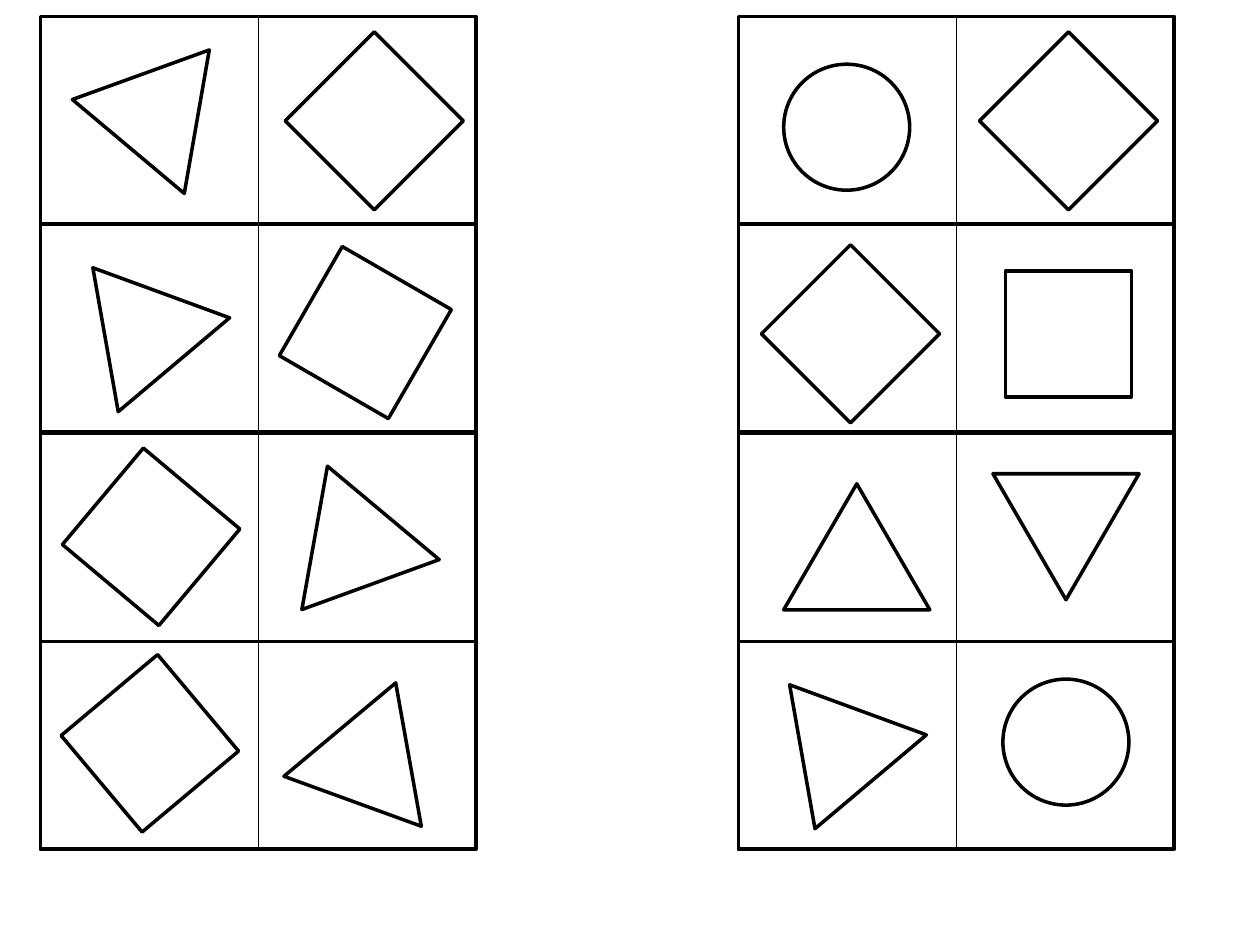
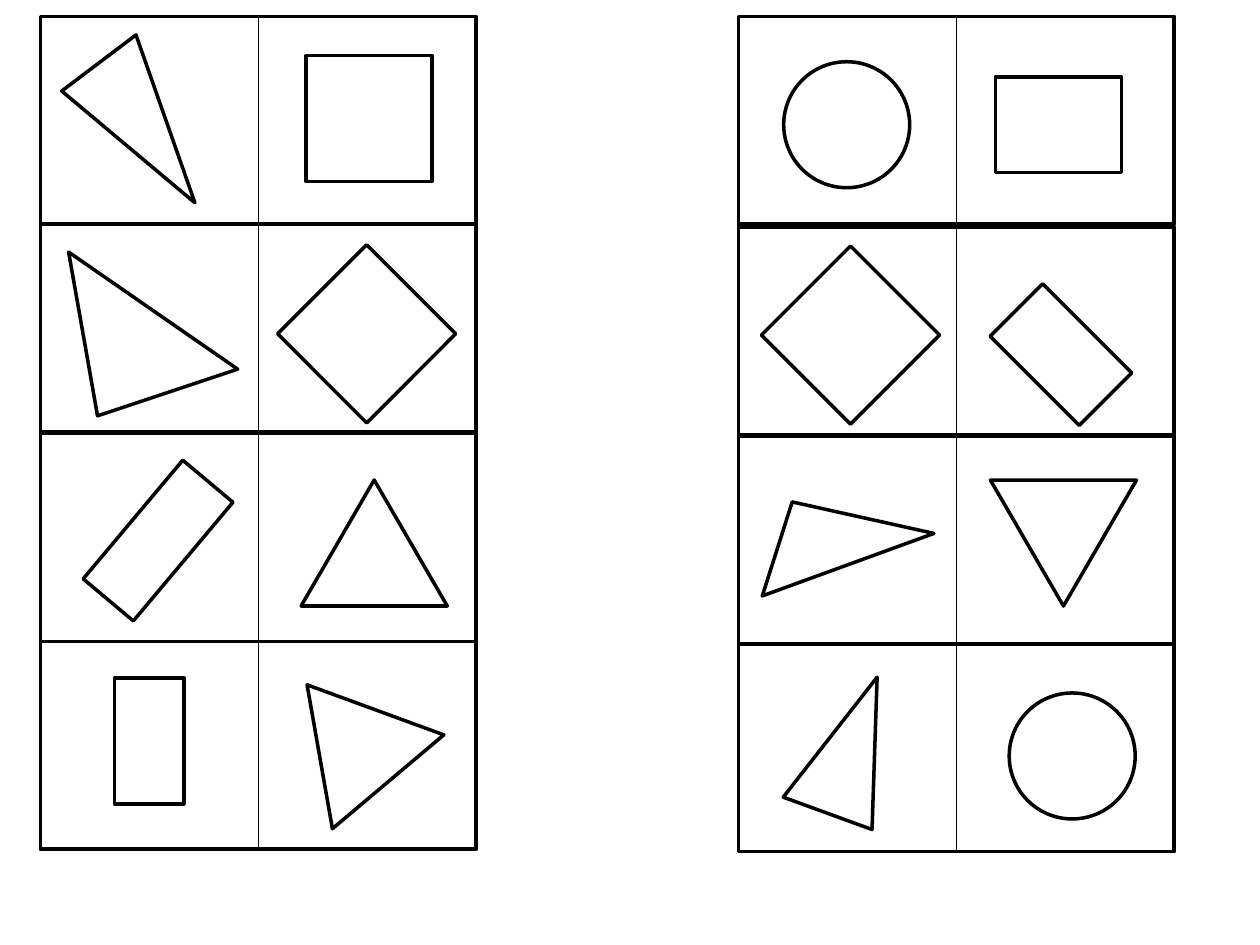
from pptx import Presentation
from pptx.dml.color import RGBColor
from pptx.enum.shapes import MSO_CONNECTOR, MSO_SHAPE
from pptx.oxml import parse_xml
from pptx.oxml.ns import nsdecls
from pptx.util import Inches, Pt

BLACK = RGBColor(0, 0, 0)
CARD_W, CARD_H = 3.46, 1.65
LEFT, RIGHT = 0.32, 5.86
EVEN = (0.13, 1.78, 3.44, 5.09)
LOW = (0.13, 1.8, 3.46, 5.11)

BOX = MSO_SHAPE.RECTANGLE
TRI = MSO_SHAPE.ISOSCELES_TRIANGLE
DISC = MSO_SHAPE.OVAL
SIZES = {BOX: (1, 1), TRI: (1.16, 1), DISC: (1, 1)}

# Each figure: kind, left, top, then any of turn, size and peak
SHEETS = [
    {
        "decks": [(LEFT, EVEN), (RIGHT, EVEN)],
        "figures": [
            (TRI, 0.76, 0.28, {"turn": 40}),
            (BOX, 2.47, 0.46, {"turn": 45}),
            (TRI, 0.75, 2.11, {"turn": 80}),
            (BOX, 2.4, 2.14, {"turn": 30}),
            (BOX, 0.7, 3.76, {"turn": 310}),
            (TRI, 2.19, 3.67, {"turn": 340}),
            (BOX, 0.69, 5.4, {"turn": 320}),
            (TRI, 2.39, 5.39, {"turn": 20}),
            (DISC, 6.22, 0.51, {}),
            (BOX, 7.98, 0.46, {"turn": 45}),
            (BOX, 6.25, 2.15, {"turn": 45}),
            (BOX, 7.98, 2.15, {}),
            (TRI, 6.22, 3.84, {}),
            (TRI, 7.88, 3.76, {"turn": 180}),
            (TRI, 6.28, 5.42, {"turn": 80}),
            (DISC, 7.96, 5.39, {}),
        ],
    },
    {
        "decks": [(LEFT, EVEN), (RIGHT, LOW)],
        "figures": [
            (TRI, 0.56, 0.53, {"turn": 40, "size": (1.38, 0.72), "peak": 0.12}),
            (BOX, 2.43, 0.44, {}),
            (TRI, 0.57, 1.97, {"turn": 80, "size": (1.32, 1.16), "peak": 0.87}),
            (BOX, 2.41, 2.15, {"turn": 45}),
            (BOX, 0.64, 4.03, {"turn": 310, "size": (1.23, 0.52)}),
            (TRI, 2.39, 3.81, {}),
            (BOX, 0.91, 5.38, {"size": (0.55, 1)}),
            (TRI, 2.45, 5.42, {"turn": 80}),
            (DISC, 6.22, 0.49, {}),
            (BOX, 8.02, 0.49, {"turn": 90, "size": (0.76, 1)}),
            (BOX, 6.25, 2.16, {"turn": 45}),
            (BOX, 7.92, 2.52, {"turn": 45, "size": (1, 0.59)}),
            (TRI, 5.9, 3.88, {"turn": 340, "size": (1.45, 0.62), "peak": 0.33}),
            (TRI, 7.86, 3.81, {"turn": 180}),
            (TRI, 6.39, 5.34, {"turn": 20, "size": (0.75, 1.15)}),
            (DISC, 8.01, 5.5, {}),
        ],
    },
]


def outline(slide, kind, left, top, turn=0, size=None, peak=None):
    """Draw an unfilled shape; peak places a triangle's apex along its base."""
    wide, high = size or SIZES[kind]
    shape = slide.shapes.add_shape(
        kind, Inches(left), Inches(top), Inches(wide), Inches(high))
    shape.rotation = turn
    if peak is not None:
        shape.adjustments[0] = peak
    shape.shadow.inherit = False
    shape.fill.background()
    shape.line.color.rgb = BLACK
    shape.line.width = Pt(2)


def domino(slide, left, top):
    """Draw a card with a thin line between its halves."""
    outline(slide, BOX, left, top, size=(CARD_W, CARD_H))
    mid = Inches(left + CARD_W / 2)
    rule = slide.shapes.add_connector(
        MSO_CONNECTOR.STRAIGHT, mid, Inches(top), mid, Inches(top + CARD_H))
    rule.line.color.rgb = BLACK
    rule.line.width = Pt(0.75)
    rule._element.spPr.append(parse_xml(f"<a:effectLst {nsdecls('a')}/>"))


prs = Presentation()
prs.slide_width = Inches(10)
prs.slide_height = Inches(7.5)
blank = prs.slide_layouts[6]

for sheet in SHEETS:
    slide = prs.slides.add_slide(blank)
    for left, tops in sheet["decks"]:
        for top in tops:
            domino(slide, left, top)
    for kind, left, top, form in sheet["figures"]:
        outline(slide, kind, left, top, **form)

prs.save("out.pptx")
